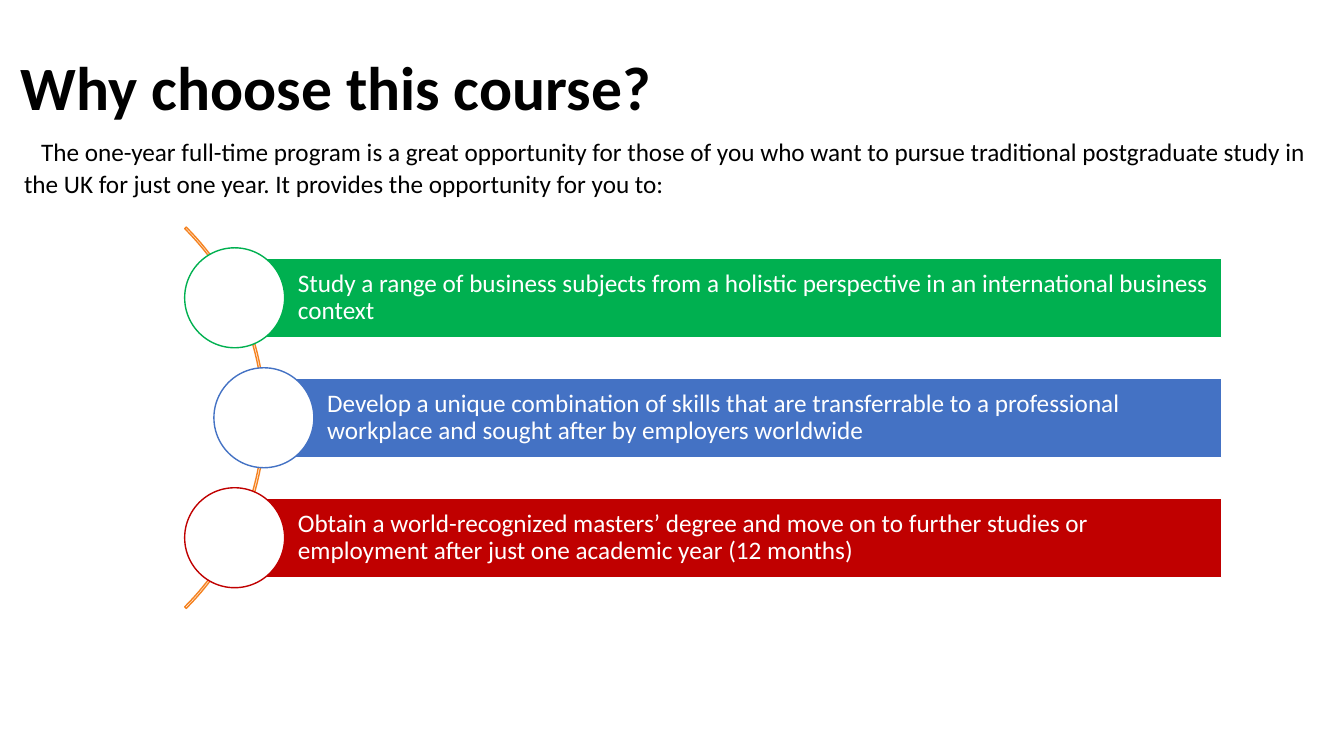
import pptx
import pptx.util
import pptx.dml.color
import pptx.enum.shapes
import pptx.enum.text

Pt = pptx.util.Pt
SHAPES = pptx.enum.shapes.MSO_SHAPE
ANCHOR = pptx.enum.text.MSO_ANCHOR

TITLE = "Why choose this course?"
INTRO = (
    "The one-year full-time program is a great opportunity for those of you who want "
    "to pursue traditional postgraduate study in the UK for just one year. "
    "It provides the opportunity for you to:"
)
REASONS = [
    ("Study a range of business subjects from a holistic perspective "
     "in an international business context", "green", 167.6),
    ("Develop a unique combination of skills that are transferrable to a professional "
     "workplace and sought after by employers worldwide", "blue", 188.5),
    ("Obtain a world-recognized masters’ degree and move on to further studies or "
     "employment after just one academic year (12 months)", "red", 167.6),
]
THEME = {
    "font": "Calibri", "title_size": 44, "body_size": 18,
    "black": "000000", "white": "FFFFFF", "orange": "F58220",
    "green": "00B050", "blue": "4472C4", "red": "C00000",
}

BAR_RIGHT = 872.6
BAR_HEIGHT = 56.9
BAR_PITCH = 85.7
MIDDLE_Y = 298.4
CIRCLE = 71.4
ARC = 385.2
ARC_LEFT = -195.8


def color(name):
    return pptx.dml.color.RGBColor.from_string(THEME[name])


def write(shape, text, size, ink, spacing, after=0, bold=False):
    frame = shape.text_frame
    frame.word_wrap = True
    paragraph = frame.paragraphs[0]
    paragraph.text = text
    paragraph.alignment = pptx.enum.text.PP_ALIGN.LEFT
    paragraph.line_spacing = spacing
    paragraph.space_after = Pt(after)
    paragraph.font.name = THEME["font"]
    paragraph.font.size = Pt(THEME[size])
    paragraph.font.bold = bold
    paragraph.font.color.rgb = color(ink)
    return paragraph


def add_shape(slide, kind, left, top, width, height, line, fill=None):
    shape = slide.shapes.add_shape(kind, Pt(left), Pt(top), Pt(width), Pt(height))
    shape.shadow.inherit = False
    shape.line.color.rgb = color(line)
    shape.line.width = Pt(1)
    if fill:
        shape.fill.solid()
        shape.fill.fore_color.rgb = color(fill)
    else:
        shape.fill.background()
    return shape


def add_reason(slide, text, fill, center_x, center_y):
    bar = add_shape(slide, SHAPES.RECTANGLE, center_x, center_y - BAR_HEIGHT / 2,
                    BAR_RIGHT - center_x, BAR_HEIGHT, "white", fill)
    write(bar, text, "body_size", "white", 0.9)
    frame = bar.text_frame
    frame.vertical_anchor = ANCHOR.MIDDLE
    frame.margin_left = Pt(45.2)
    frame.margin_top = frame.margin_right = frame.margin_bottom = Pt(3.6)
    add_shape(slide, SHAPES.OVAL, center_x - CIRCLE / 2, center_y - CIRCLE / 2,
              CIRCLE, CIRCLE, fill, "white")


def main():
    presentation = pptx.Presentation()
    presentation.slide_width = Pt(960)
    presentation.slide_height = Pt(540)
    slide = presentation.slides.add_slide(presentation.slide_layouts[6])

    title = slide.shapes.add_textbox(Pt(7.9), Pt(13), Pt(548), Pt(93.6))
    write(title, TITLE, "title_size", "black", 1.07, 8, True)
    title.text_frame.vertical_anchor = ANCHOR.MIDDLE

    intro = slide.shapes.add_textbox(Pt(10.1), Pt(92.2), Pt(930.2), Pt(53.3))
    paragraph = write(intro, INTRO, "body_size", "black", 1.07, 8)
    properties = paragraph._p.get_or_add_pPr()
    properties.set("marL", "0")
    properties.set("indent", str(Pt(12.2)))

    arc = add_shape(slide, SHAPES.BLOCK_ARC, ARC_LEFT, MIDDLE_Y - ARC / 2,
                    ARC, ARC, "orange")
    for index, value in enumerate((189, 27, 0.004)):
        arc.adjustments[index] = value

    for index, (text, fill, center_x) in enumerate(REASONS):
        add_reason(slide, text, fill, center_x, MIDDLE_Y + (index - 1) * BAR_PITCH)

    presentation.save("out.pptx")


if __name__ == "__main__":
    main()
